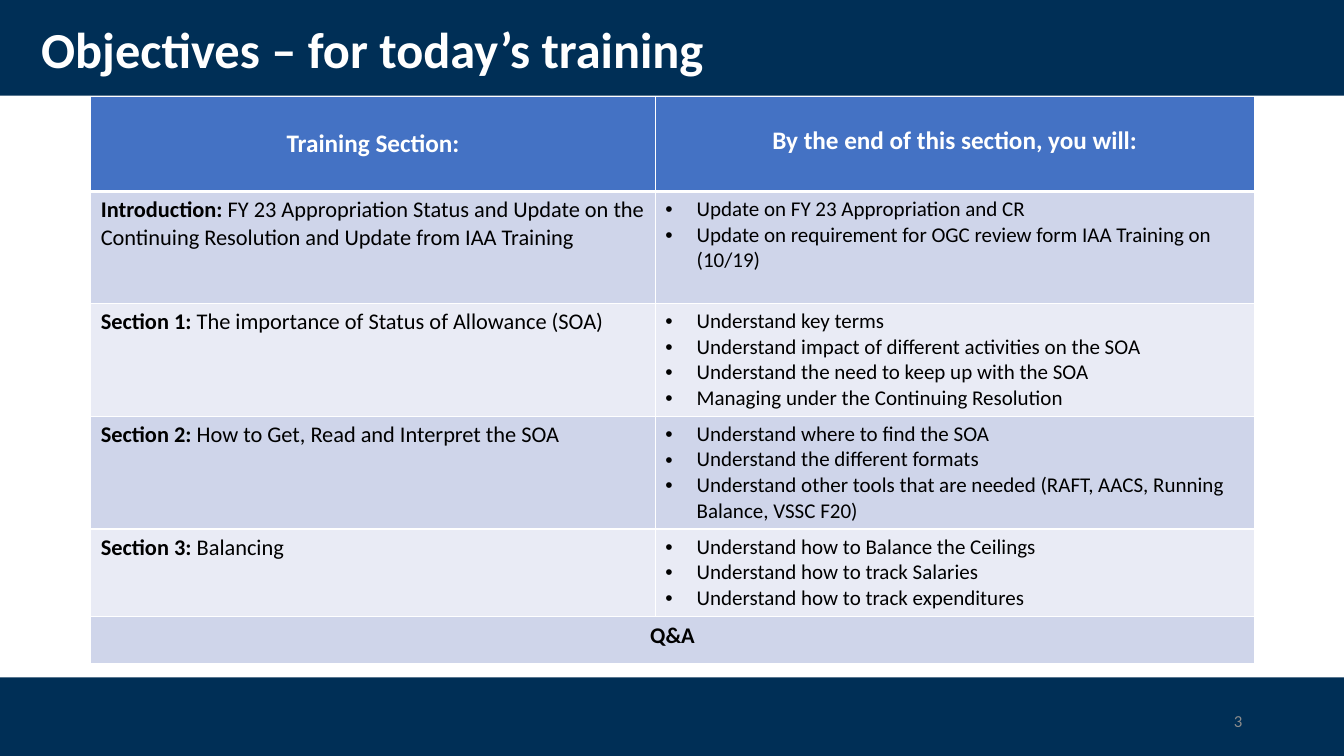
from dataclasses import dataclass

from lxml import etree
from pptx import Presentation
from pptx import util as u
from pptx.dml.color import RGBColor
from pptx.enum import shapes, text
from pptx.oxml import ns


@dataclass(frozen=True)
class Theme:
    """Colours, type sizes and font of the slide."""
    navy: str = "002F56"
    header: str = "4472C4"
    bands: tuple = ("CFD5EA", "E9EBF5")
    white: str = "FFFFFF"
    black: str = "000000"
    grey: str = "8C8C8C"
    font: str = "Calibri"
    title_size: int = 36
    header_size: int = 18
    section_size: int = 16
    goal_size: int = 15
    number_size: int = 12


THEME = Theme()
LEFT, CENTER, RIGHT = text.PP_ALIGN.LEFT, text.PP_ALIGN.CENTER, text.PP_ALIGN.RIGHT
SLIDE_WIDTH, SLIDE_HEIGHT = 13.33, 7.5
COLUMN_WIDTHS = (5.6, 5.94)
ROW_HEIGHTS = (0.94, 1.11, 1.12, 1.12, 0.87, 0.47)
HEADERS = (("Training Section:", 0.32), ("By the end of this section, you will:", 0.29))
SECTIONS = (
    ("Introduction: ",
     "FY 23 Appropriation Status and Update on the Continuing Resolution "
     "and Update from IAA Training",
     ("Update on FY 23 Appropriation and CR",
      "Update on requirement for OGC review form IAA Training on (10/19)")),
    ("Section 1: ", "The importance of Status of Allowance (SOA)",
     ("Understand key terms",
      "Understand impact of different activities on the SOA",
      "Understand the need to keep up with the SOA",
      "Managing under the Continuing Resolution")),
    ("Section 2: ", "How to Get, Read and Interpret the SOA",
     ("Understand where to find the SOA",
      "Understand the different formats",
      "Understand other tools that are needed (RAFT, AACS, Running Balance, VSSC F20)")),
    ("Section 3: ", "Balancing",
     ("Understand how to Balance the Ceilings",
      "Understand how to track Salaries",
      "Understand how to track expenditures")),
)


def add_run(paragraph, words, size, color, bold=False):
    """Add one formatted run to a paragraph."""
    run = paragraph.add_run()
    run.text = words
    formats = {"name": THEME.font, "size": u.Pt(size), "bold": bold}
    for key, value in formats.items():
        setattr(run.font, key, value)
    run.font.color.rgb = RGBColor.from_string(color)


def add_bullet(paragraph):
    """Give a paragraph a hanging round bullet."""
    properties = paragraph._p.get_or_add_pPr()
    hang = u.Inches(0.31)
    properties.set("marL", str(hang))
    properties.set("indent", str(-hang))
    etree.SubElement(properties, ns.qn("a:buFont"), typeface="Arial")
    etree.SubElement(properties, ns.qn("a:buChar"), char="•")


def style_cell(cell, fill, top=1, bottom=1):
    """Fill a cell and draw its white borders."""
    cell.fill.solid()
    cell.fill.fore_color.rgb = RGBColor.from_string(fill)
    properties = cell._tc.get_or_add_tcPr()
    borders = {"a:lnL": 1, "a:lnR": 1, "a:lnT": top, "a:lnB": bottom}
    for index, (tag, width) in enumerate(borders.items()):
        border = etree.Element(ns.qn(tag), w=str(u.Pt(width)))
        paint = etree.SubElement(border, ns.qn("a:solidFill"))
        etree.SubElement(paint, ns.qn("a:srgbClr"), val=THEME.white)
        properties.insert(index, border)


def add_band(slide, left, top, width, height):
    """Draw a navy band across the given box."""
    band = slide.shapes.add_shape(
        shapes.MSO_SHAPE.RECTANGLE, *map(u.Inches, (left, top, width, height)))
    band.shadow.inherit = False
    band.fill.solid()
    band.fill.fore_color.rgb = RGBColor.from_string(THEME.navy)
    band.line.fill.background()


def add_label(slide, box, words, size, color, bold, align, spacing):
    """Write one line of text centred vertically in a box."""
    frame = slide.shapes.add_textbox(*map(u.Inches, box)).text_frame
    frame.word_wrap = True
    frame.vertical_anchor = text.MSO_ANCHOR.MIDDLE
    paragraph = frame.paragraphs[0]
    paragraph.alignment = align
    paragraph.line_spacing = spacing
    add_run(paragraph, words, size, color, bold)


def add_title_region(slide, left, top, width, height):
    """Place the top band and the slide title."""
    add_band(slide, left, top, width, height)
    add_label(slide, (left + 0.31, top + 0.18, 11.5, 0.68),
              "Objectives – for today’s training",
              THEME.title_size, THEME.white, True, LEFT, 0.9)


def add_footer_region(slide, left, top, width, height):
    """Place the bottom band and the slide number."""
    add_band(slide, left, top, width, height)
    add_label(slide, (left + 9.42, top + 0.23, 3, 0.4), "3",
              THEME.number_size, THEME.grey, False, RIGHT, 1.0)


def add_objectives_table(slide, left, top, width, height):
    """Place the table of training sections and their goals."""
    table = slide.shapes.add_table(
        len(ROW_HEIGHTS), len(COLUMN_WIDTHS),
        *map(u.Inches, (left, top, width, height))).table
    for column, column_width in zip(table.columns, COLUMN_WIDTHS):
        column.width = u.Inches(column_width)
    for row, row_height in zip(table.rows, ROW_HEIGHTS):
        row.height = u.Inches(row_height)

    for column, (heading, margin) in enumerate(HEADERS):
        cell = table.cell(0, column)
        style_cell(cell, THEME.header, bottom=3)
        cell.margin_top = u.Inches(margin)
        paragraph = cell.text_frame.paragraphs[0]
        paragraph.alignment = CENTER
        add_run(paragraph, heading, THEME.header_size, THEME.white, True)

    for row in range(1, len(ROW_HEIGHTS)):
        for column in range(len(COLUMN_WIDTHS)):
            style_cell(table.cell(row, column), THEME.bands[(row - 1) % 2],
                       top=3 if row == 1 else 1)

    for row, (section, topic, goals) in enumerate(SECTIONS, 1):
        paragraph = table.cell(row, 0).text_frame.paragraphs[0]
        add_run(paragraph, section, THEME.section_size, THEME.black, True)
        add_run(paragraph, topic, THEME.section_size, THEME.black)
        frame = table.cell(row, 1).text_frame
        for index, goal in enumerate(goals):
            paragraph = frame.add_paragraph() if index else frame.paragraphs[0]
            add_bullet(paragraph)
            add_run(paragraph, goal, THEME.goal_size, THEME.black)

    last = len(ROW_HEIGHTS) - 1
    closing = table.cell(last, 0)
    closing.merge(table.cell(last, 1))
    paragraph = closing.text_frame.paragraphs[0]
    paragraph.alignment = CENTER
    add_run(paragraph, "Q&A", THEME.section_size, THEME.black, True)


def main():
    """Build and save the slide."""
    deck = Presentation()
    deck.slide_width = u.Inches(SLIDE_WIDTH)
    deck.slide_height = u.Inches(SLIDE_HEIGHT)
    slide = deck.slides.add_slide(deck.slide_layouts[6])
    add_title_region(slide, 0, 0, SLIDE_WIDTH, 0.95)
    add_footer_region(slide, 0, 6.72, SLIDE_WIDTH, 0.78)
    add_objectives_table(slide, 0.9, 0.96, sum(COLUMN_WIDTHS), sum(ROW_HEIGHTS))
    deck.save("out.pptx")


if __name__ == "__main__":
    main()
